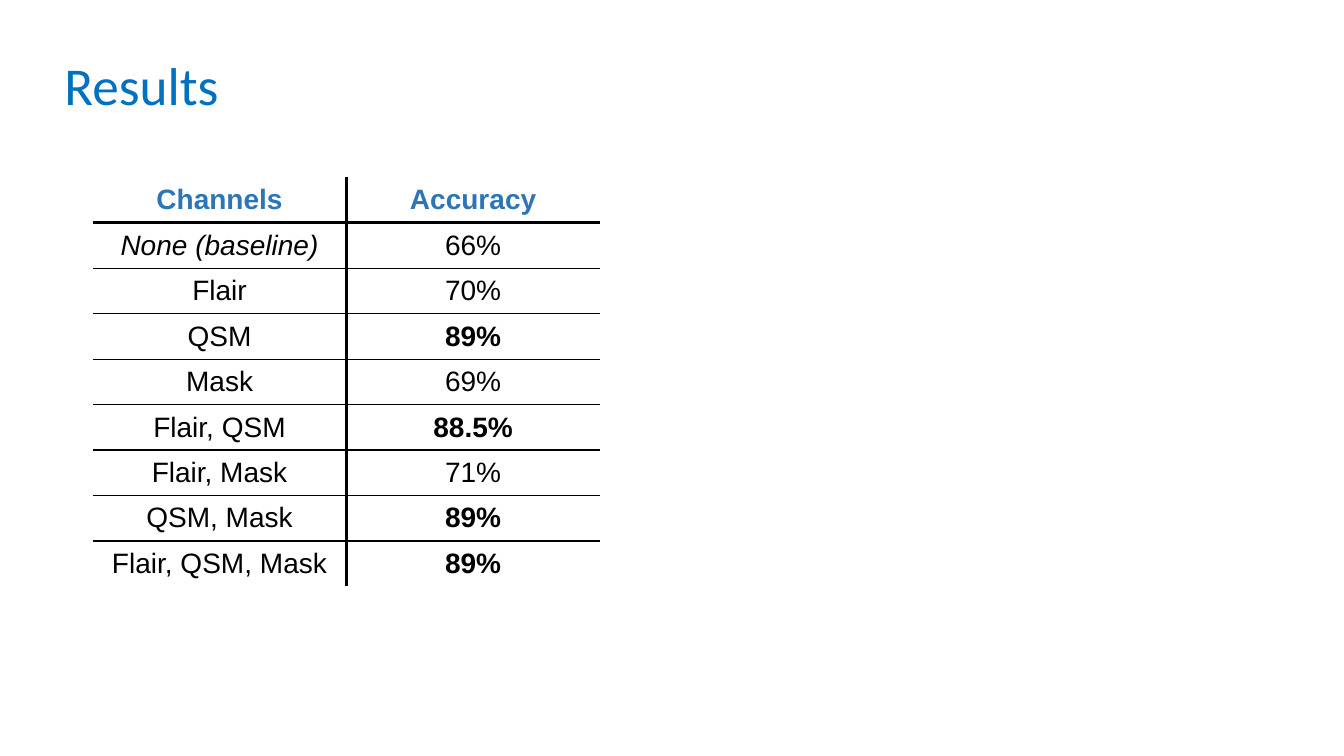
from lxml import etree
from pptx import Presentation
from pptx import util as u
from pptx.dml.color import RGBColor
from pptx.enum import text
from pptx.oxml.ns import qn

BLACK, BLUE, TITLE_BLUE = "000000", "2E75B6", "0070C0"
THICK, THIN = 2.25, 1

# Channels, accuracy, whether the accuracy is highlighted
RESULTS = [
    ("None (baseline)", "66%", False),
    ("Flair", "70%", False),
    ("QSM", "89%", True),
    ("Mask", "69%", False),
    ("Flair, QSM", "88.5%", True),
    ("Flair, Mask", "71%", False),
    ("QSM, Mask", "89%", True),
    ("Flair, QSM, Mask", "89%", True),
]


def rgb(color):
    return RGBColor.from_string(color)


def format_run(r, font, size, color, bold=False, italic=False):
    r.font.name = font
    r.font.size = u.Pt(size)
    r.font.color.rgb = rgb(color)
    r.font.bold = bold
    r.font.italic = italic


def add_title(s, title):
    sp = s.shapes.add_textbox(u.Inches(0.54), u.Inches(0.4),
                              u.Inches(11.88), u.Inches(0.95))
    tf = sp.text_frame
    tf.word_wrap = True
    tf.vertical_anchor = text.MSO_ANCHOR.MIDDLE
    tf.text = title
    p = tf.paragraphs[0]
    p.line_spacing = 0.9
    format_run(p.runs[0], "Calibri", 38, TITLE_BLUE)


def set_borders(cell, **widths):
    """Draw the given sides (L, R, T, B) in points; hide the others."""
    tcPr = cell._tc.get_or_add_tcPr()
    for i, side in enumerate("LRTB"):
        ln = etree.Element(qn(f"a:ln{side}"))
        if side in widths:
            ln.set("w", str(u.Pt(widths[side])))
            fill = etree.SubElement(ln, qn("a:solidFill"))
            etree.SubElement(fill, qn("a:srgbClr"), val=BLACK)
        else:
            etree.SubElement(ln, qn("a:noFill"))
        tcPr.insert(i, ln)


def fill_cell(cell, value, color=BLACK, bold=False, italic=False):
    cell.fill.background()
    cell.vertical_anchor = text.MSO_ANCHOR.MIDDLE
    cell.text = value
    p = cell.text_frame.paragraphs[0]
    p.alignment = text.PP_ALIGN.CENTER
    format_run(p.runs[0], "Arial", 20, color, bold, italic)


def add_results_table(s):
    n_rows = len(RESULTS) + 1
    table = s.shapes.add_table(n_rows, 2, u.Inches(0.92), u.Inches(1.76),
                               u.Inches(5.03), u.Inches(4.06)).table
    table.first_row = table.horz_banding = False

    # Header
    for col, heading in enumerate(("Channels", "Accuracy")):
        fill_cell(table.cell(0, col), heading, BLUE, bold=True)

    # Results, with the baseline in italics
    for row, (channels, accuracy, best) in enumerate(RESULTS, start=1):
        fill_cell(table.cell(row, 0), channels, italic=row == 1)
        fill_cell(table.cell(row, 1), accuracy, bold=best)

    # Inner rules: thick below the header and between the columns
    for row in range(n_rows):
        widths = {}
        if row > 0:
            widths["T"] = THICK if row == 1 else THIN
        if row < n_rows - 1:
            widths["B"] = THICK if row == 0 else THIN
        set_borders(table.cell(row, 0), R=THICK, **widths)
        set_borders(table.cell(row, 1), L=THICK, **widths)


def main():
    prs = Presentation()
    prs.slide_width, prs.slide_height = u.Inches(13.33), u.Inches(7.5)
    s = prs.slides.add_slide(prs.slide_layouts[6])
    add_title(s, "Results")
    add_results_table(s)
    prs.save("out.pptx")


if __name__ == "__main__":
    main()
